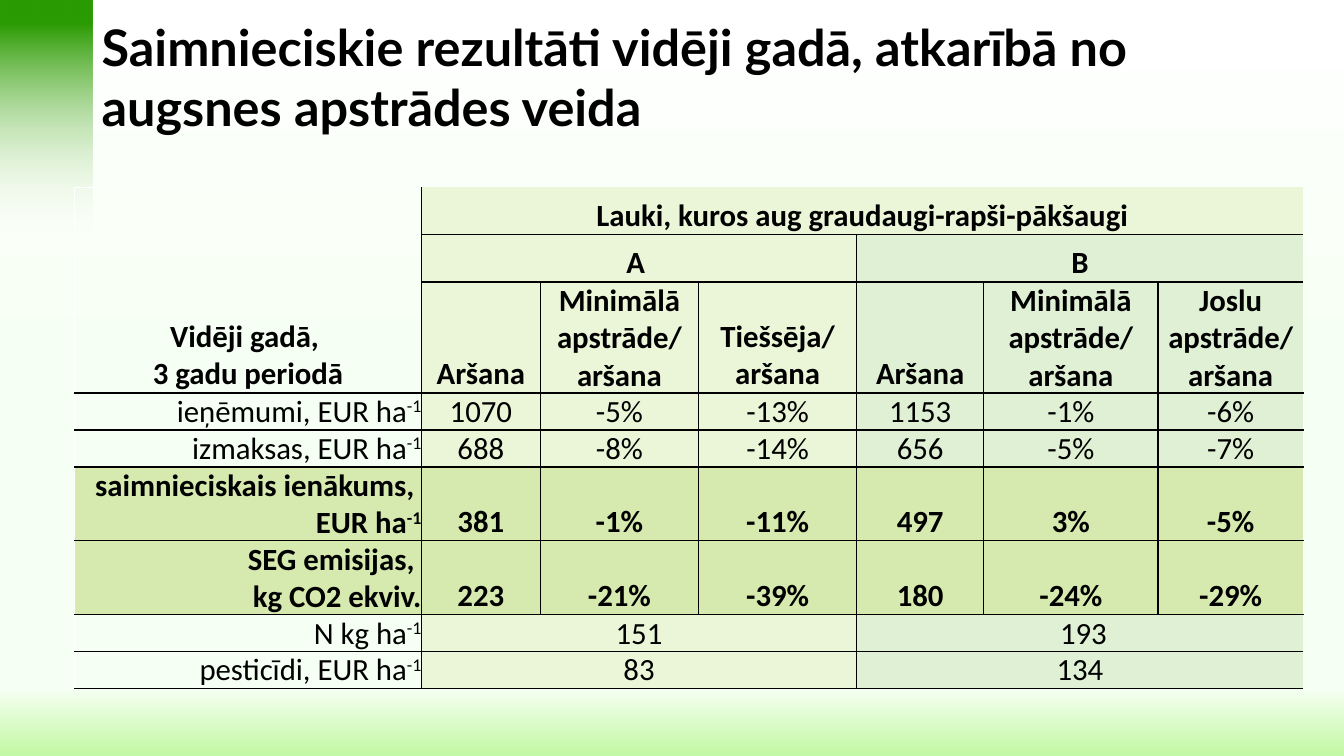
import pptx
import pptx.dml.color
import pptx.enum.shapes
import pptx.enum.text
import pptx.oxml.ns
import pptx.util
from lxml import etree

Pt = pptx.util.Pt
qn = pptx.oxml.ns.qn
ALIGN = pptx.enum.text.PP_ALIGN
ANCHOR = pptx.enum.text.MSO_ANCHOR

COLORS = {
    "text": "000000", "line": "000000", "edge": "FFFFFF",
    "farm_a": "EBF5D7", "farm_b": "DFF0D4", "key": "D6EAAF",
    "white": "FFFFFF", "mist": "F6FFF3", "lime": "C1F8A2",
    "green": "2A9B00", "pale": "ECF9DF",
}
TITLE_FONT = {"name": "Lato", "size": Pt(36), "bold": True}
TABLE_FONT = {"name": "Calibri", "size": Pt(22)}
NO_MARGINS = dict.fromkeys(
    ("margin_left", "margin_top", "margin_right", "margin_bottom"), 0)
PLAIN_TABLE = "{2D5ABB26-0587-4C30-8999-92F81FD0307C}"

TITLE = "Saimnieciskie rezultāti vidēji gadā, atkarībā no augsnes apstrādes veida"
CORNER = "Vidēji gadā, \n3 gadu periodā"
HEADERS = [
    ["Lauki, kuros aug graudaugi-rapši-pākšaugi"],
    ["A ", "B"],
    ["Aršana", "Minimālā apstrāde/ aršana", "Tiešsēja/ aršana",
     "Aršana", "Minimālā apstrāde/ aršana", "Joslu apstrāde/ aršana"],
]
# Label (text after ^ is superscript), key row, values
RESULTS = [
    ("ieņēmumi, EUR ha^-1", False, ["1070", "-5%", "-13%", "1153", "-1%", "-6%"]),
    ("izmaksas, EUR ha^-1", False, ["688", "-8%", "-14%", "656", "-5%", "-7%"]),
    ("saimnieciskais ienākums, \nEUR ha^-1", True,
     ["381", "-1%", "-11%", "497", "3%", "-5%"]),
    ("SEG emisijas, \nkg CO2 ekviv.", True,
     ["223", "-21%", "-39%", "180", "-24%", "-29%"]),
    ("N kg ha^-1", False, ["151", " 193"]),
    ("pesticīdi, EUR ha^-1", False, ["83", "134"]),
]
COL_WIDTHS = [247.7, 85, 113, 113, 90.7, 124.6, 103.7]
ROW_HEIGHTS = [33.8, 33.8, 76.3] + [25.2] * len(RESULTS)
VALUE_COLS = len(COL_WIDTHS) - 1


def rgb(name):
    return pptx.dml.color.RGBColor.from_string(COLORS[name])


def apply(target, values):
    for name, value in values.items():
        setattr(target, name, value)


def set_gradient(fill, element, stops):
    """Vertical gradient from (percent, colour, opacity percent) stops."""
    fill.gradient()
    grad = next(element.iter(qn("a:gradFill")))
    gs_list = grad.find(qn("a:gsLst"))
    for gs in list(gs_list):
        gs_list.remove(gs)
    for pos, color, opacity in stops:
        gs = etree.SubElement(gs_list, qn("a:gs"), pos=str(pos * 1000))
        clr = etree.SubElement(gs, qn("a:srgbClr"), val=COLORS[color])
        if opacity < 100:
            etree.SubElement(clr, qn("a:alpha"), val=str(opacity * 1000))
    grad.find(qn("a:lin")).set("ang", "5400000")


def add_run(p, text, font, baseline=None):
    r = p.add_run()
    r.text = text
    apply(r.font, font)
    r.font.color.rgb = rgb("text")
    if baseline:
        r.font._element.set("baseline", str(baseline * 1000))


def add_corner_band(s):
    sp = s.shapes.add_shape(pptx.enum.shapes.MSO_SHAPE.RECTANGLE,
                            Pt(-1.44), 0, Pt(67.7), Pt(164.9))
    sp.shadow.inherit = False
    sp.line.fill.background()
    set_gradient(sp.fill, sp.element, [(10, "green", 100), (100, "pale", 0)])


def add_title(s):
    sp = s.shapes.add_textbox(Pt(65.5), Pt(9.4), Pt(864), Pt(90))
    tf = sp.text_frame
    apply(tf, {"word_wrap": True, "vertical_anchor": ANCHOR.MIDDLE})
    add_run(tf.paragraphs[0], TITLE, TITLE_FONT)


def set_borders(cell, edges):
    tc_pr = cell._tc.get_or_add_tcPr()
    for i, (tag, color) in enumerate(edges):
        ln = etree.Element(qn("a:" + tag), w=str(Pt(1)))
        solid = etree.SubElement(ln, qn("a:solidFill"))
        etree.SubElement(solid, qn("a:srgbClr"), val=COLORS[color])
        tc_pr.insert(i, ln)


def block_edges(row, col, top, left, bottom, right):
    """Outer edges that one cell of a merged block carries."""
    edges = []
    if col == left:
        edges.append(("lnL", "line" if col else "edge"))
    if col == right:
        edges.append(("lnR", "edge" if col == VALUE_COLS else "line"))
    if row == top and (row or not col):
        edges.append(("lnT", "line" if row else "edge"))
    if row == bottom:
        edges.append(("lnB", "line"))
    return edges


def fill_block(table, top, left, text, fill=None, bold=False,
               align=ALIGN.CENTER, rows=1, cols=1):
    bottom, right = top + rows - 1, left + cols - 1
    cell = table.cell(top, left)
    if rows * cols > 1:
        cell.merge(table.cell(bottom, right))

    # Fill and borders
    for row in range(top, bottom + 1):
        for col in range(left, right + 1):
            part = table.cell(row, col)
            if fill:
                part.fill.solid()
                part.fill.fore_color.rgb = rgb(fill)
            else:
                part.fill.background()
            set_borders(part, block_edges(row, col, top, left, bottom, right))

    # Text
    apply(cell, {**NO_MARGINS, "vertical_anchor": ANCHOR.BOTTOM})
    p = cell.text_frame.paragraphs[0]
    p.alignment = align
    font = {**TABLE_FONT, "bold": bold}
    base, _, power = text.partition("^")
    for i, line in enumerate(base.split("\n")):
        if i:
            p.add_line_break()
        add_run(p, line, font)
    if power:
        add_run(p, power, font, baseline=30)


def fill_values(table, row, values, bold, key=False):
    span = VALUE_COLS // len(values)
    for i, value in enumerate(values):
        col = 1 + i * span
        farm = "farm_a" if col <= VALUE_COLS // 2 else "farm_b"
        fill_block(table, row, col, value, "key" if key else farm, bold, cols=span)


def add_results_table(s):
    frame = s.shapes.add_table(len(ROW_HEIGHTS), len(COL_WIDTHS),
                               Pt(53.3), Pt(133.9), Pt(879), Pt(358.6))
    table = frame.table
    apply(table, {"first_row": False, "horz_banding": False})
    next(frame._element.iter(qn("a:tableStyleId"))).text = PLAIN_TABLE
    for column, width in zip(table.columns, COL_WIDTHS):
        column.width = Pt(width)
    for row, height in zip(table.rows, ROW_HEIGHTS):
        row.height = Pt(height)

    # Headings
    fill_block(table, 0, 0, CORNER, bold=True, rows=len(HEADERS))
    for row, values in enumerate(HEADERS):
        fill_values(table, row, values, bold=True)

    # Results
    for row, (label, key, values) in enumerate(RESULTS, len(HEADERS)):
        fill_block(table, row, 0, label, "key" if key else None, key, ALIGN.RIGHT)
        fill_values(table, row, values, key, key)


def main():
    prs = pptx.Presentation()
    prs.slide_width, prs.slide_height = Pt(960), Pt(540)
    s = prs.slides.add_slide(prs.slide_layouts[6])
    set_gradient(s.background.fill, s.element, [
        (1, "white", 100), (50, "mist", 100), (91, "mist", 100), (100, "lime", 100)])
    add_corner_band(s)
    add_title(s)
    add_results_table(s)
    prs.save("out.pptx")


if __name__ == "__main__":
    main()
